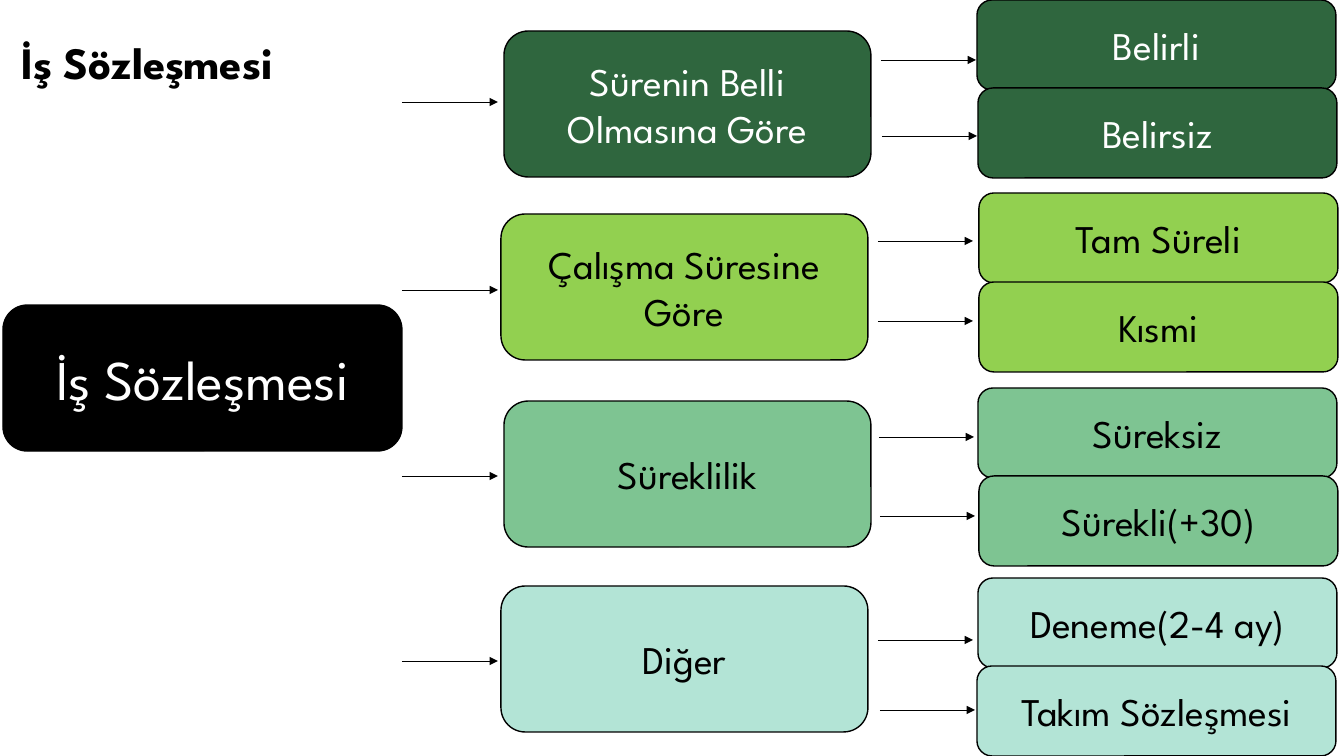
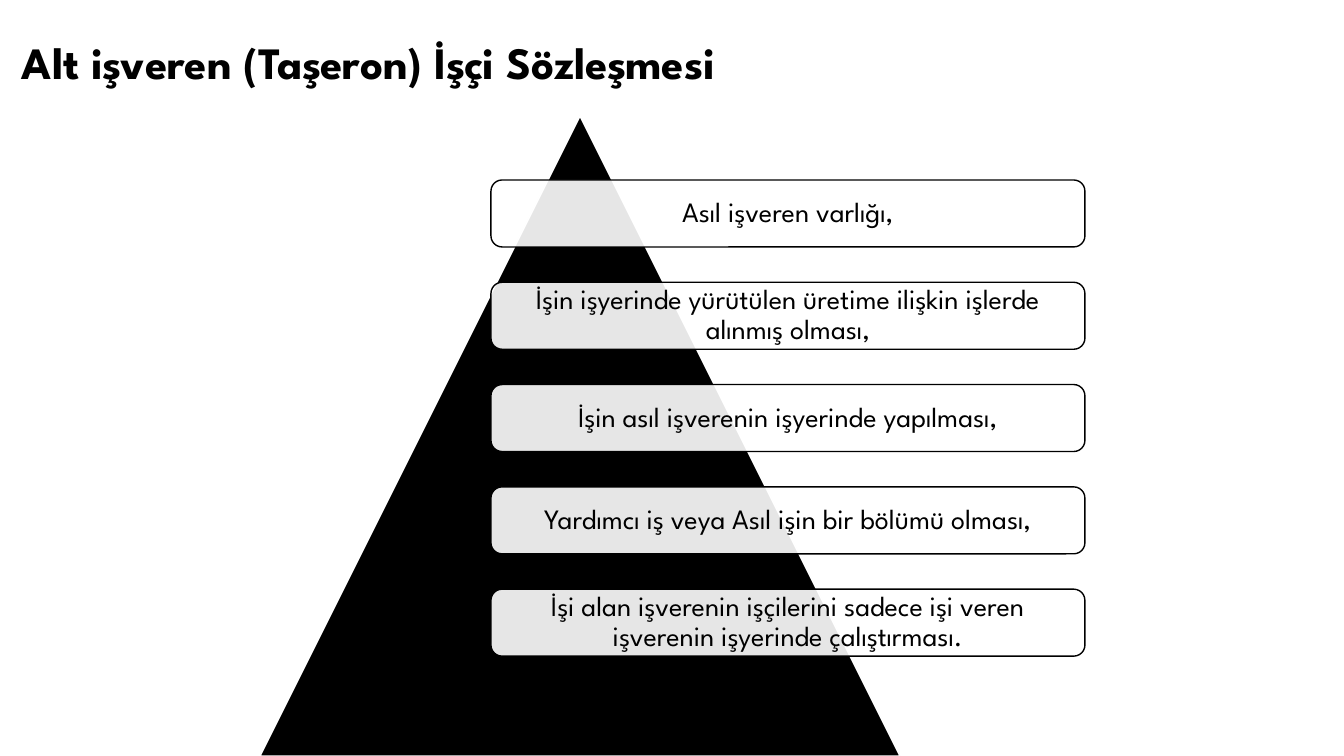
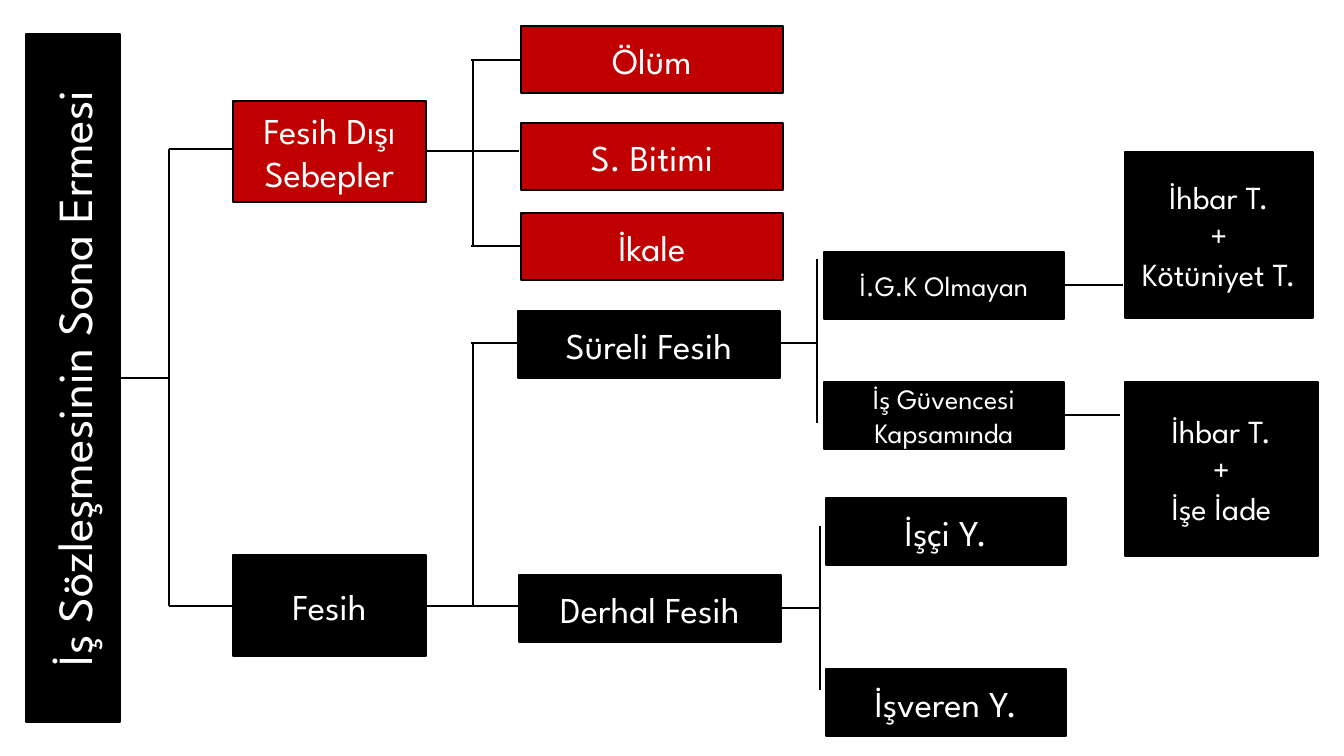
from lxml import etree
from pptx import Presentation
from pptx.dml.color import RGBColor
from pptx.enum.shapes import MSO_CONNECTOR, MSO_SHAPE
from pptx.enum.text import MSO_ANCHOR, PP_ALIGN
from pptx.oxml.ns import qn
from pptx.util import Pt

RECTANGLE = MSO_SHAPE.RECTANGLE
ROUNDED = MSO_SHAPE.ROUNDED_RECTANGLE
TRIANGLE = MSO_SHAPE.ISOSCELES_TRIANGLE
STRAIGHT = MSO_CONNECTOR.STRAIGHT
MIDDLE = MSO_ANCHOR.MIDDLE
CENTER = PP_ALIGN.CENTER

FONT = "League Spartan"
PIXEL = 914400 / 100.8
COLORS = {
    name: RGBColor.from_string(value)
    for name, value in {
        "black": "000000",
        "white": "FFFFFF",
        "forest": "2F663E",
        "lime": "92D050",
        "sage": "7EC492",
        "mint": "B3E4D6",
        "red": "C00000",
    }.items()
}


def add_box(slide, kind, place, fill, text="", size=28, ink="white", outline="black"):
    shape = slide.shapes.add_shape(kind, *[round(length * PIXEL) for length in place])
    shape.shadow.inherit = False
    shape.fill.solid()
    shape.fill.fore_color.rgb = COLORS[fill]
    shape.line.color.rgb = COLORS[outline]
    shape.line.width = Pt(1)
    frame = shape.text_frame
    frame.word_wrap = True
    frame.vertical_anchor = MIDDLE
    frame.text = text
    for paragraph in frame.paragraphs:
        paragraph.alignment = CENTER
        paragraph.font.name = FONT
        paragraph.font.size = Pt(size)
        paragraph.font.color.rgb = COLORS[ink]
    return shape


def add_line(slide, ends, width=1.5, arrow=False):
    line = slide.shapes.add_connector(STRAIGHT, *[round(length * PIXEL) for length in ends])
    line.line.color.rgb = COLORS["black"]
    line.line.width = Pt(width)
    properties = line.element.spPr
    if arrow:
        etree.SubElement(properties.find(qn("a:ln")), qn("a:tailEnd"), type="triangle")
    etree.SubElement(properties, qn("a:effectLst"))


presentation = Presentation()
presentation.slide_width = round(1344 * PIXEL)
presentation.slide_height = round(756 * PIXEL)
blank = presentation.slide_layouts[6]
contract, subcontract, termination = [presentation.slides.add_slide(blank) for _ in range(3)]

titles = [
    (contract, "İş Sözleşmesi"),
    (subcontract, "Alt işveren (Taşeron) İşçi Sözleşmesi"),
]
for slide, title in titles:
    place = [round(length * PIXEL) for length in (12, -8, 1159, 146)]
    frame = slide.shapes.add_textbox(*place).text_frame
    frame.word_wrap = True
    frame.vertical_anchor = MIDDLE
    frame.text = title
    paragraph = frame.paragraphs[0]
    paragraph.line_spacing = 0.9
    paragraph.font.name = FONT
    paragraph.font.size = Pt(32)
    paragraph.font.bold = True
    paragraph.font.color.rgb = COLORS["black"]

add_box(contract, ROUNDED, (3, 305, 399, 146), "black", "İş Sözleşmesi", 40)
criteria = [
    ("Sürenin Belli Olmasına Göre", "forest", "white", 504, 31, 102,
     [("Belirli", 977, 0, 881, 60), ("Belirsiz", 978, 88, 882, 136)]),
    ("Çalışma Süresine Göre", "lime", "black", 501, 214, 290,
     [("Tam Süreli", 979, 193, 878, 241), ("Kısmi", 979, 282, 878, 321)]),
    ("Süreklilik", "sage", "black", 504, 401, 476,
     [("Süreksiz", 978, 388, 879, 437), ("Sürekli(+30)", 979, 476, 880, 516)]),
    ("Diğer", "mint", "black", 501, 586, 661,
     [("Deneme(2-4 ay)", 978, 578, 878, 640), ("Takım Sözleşmesi", 977, 666, 880, 710)]),
]
for criterion, fill, ink, left, top, arrow_y, kinds in criteria:
    add_line(contract, (402, arrow_y, 498, arrow_y), 0.5, True)
    add_box(contract, ROUNDED, (left, top, 367, 146), fill, criterion, ink=ink)
    for kind, kind_left, kind_top, start, y in kinds:
        add_line(contract, (start, y, start + 95, y), 0.5, True)
        add_box(contract, ROUNDED, (kind_left, kind_top, 359, 90), fill, kind, ink=ink)

add_box(subcontract, TRIANGLE, (260, 116, 640, 640), "black", outline="white")
conditions = [
    "Asıl işveren varlığı,",
    "İşin işyerinde yürütülen üretime ilişkin işlerde alınmış olması,",
    "İşin asıl işverenin işyerinde yapılması,",
    "Yardımcı iş veya Asıl işin bir bölümü olması,",
    "İşi alan işverenin işçilerini sadece işi veren işverenin işyerinde çalıştırması.",
]
for index, condition in enumerate(conditions):
    place = (491, 180 + 102.3 * index, 594, 67)
    box = add_box(subcontract, ROUNDED, place, "white", condition, 20, "black")
    color = box.element.spPr.find(qn("a:solidFill"))[0]
    etree.SubElement(color, qn("a:alpha"), val="90000")
    frame = box.text_frame
    frame.margin_left = frame.margin_right = round(21 * PIXEL)
    frame.margin_top = frame.margin_bottom = 0
    frame.paragraphs[0].line_spacing = 0.9

heading = add_box(termination, RECTANGLE, (-271, 331, 688, 94), "black",
                  "İş Sözleşmesinin Sona Ermesi", 35)
heading.rotation = 270

branches = [
    (121, 378, 169, 378), (169, 149, 169, 606), (169, 149, 233, 149), (169, 606, 233, 606),
    (426, 151, 519, 151), (473, 60, 473, 246), (471, 60, 520, 60), (471, 246, 520, 246),
    (426, 606, 519, 606), (473, 343, 473, 606), (471, 343, 519, 343),
    (774, 343, 817, 343), (817, 259, 817, 423), (771, 608, 820, 608), (820, 526, 820, 690),
    (1064, 285, 1123, 285), (1061, 415, 1120, 415),
]
for ends in branches:
    add_line(termination, ends)

steps = [
    (193, 101, 26, [
        ("Fesih Dışı Sebepler", "red", 233, 101),
        ("Fesih", "black", 233, 555),
    ]),
    (262, 67, 26, [
        ("Ölüm", "red", 521, 26),
        ("S. Bitimi", "red", 521, 123),
        ("İkale", "red", 521, 213),
        ("Süreli Fesih", "black", 518, 311),
        ("Derhal Fesih", "black", 519, 575),
    ]),
    (240, 67, 20, [
        ("İ.G.K Olmayan", "black", 824, 252),
        ("İş Güvencesi Kapsamında", "black", 824, 382),
    ]),
    (240, 67, 26, [
        ("İşçi Y.", "black", 826, 498),
        ("İşveren Y.", "black", 826, 669),
    ]),
    (188, 166, 23, [("İhbar T.\n+\nKötüniyet T.", "black", 1125, 152)]),
    (193, 174, 23, [("İhbar T.\n+\nİşe İade", "black", 1125, 382)]),
]
for width, height, size, boxes in steps:
    for text, fill, left, top in boxes:
        add_box(termination, RECTANGLE, (left, top, width, height), fill, text, size)

presentation.save("out.pptx")
